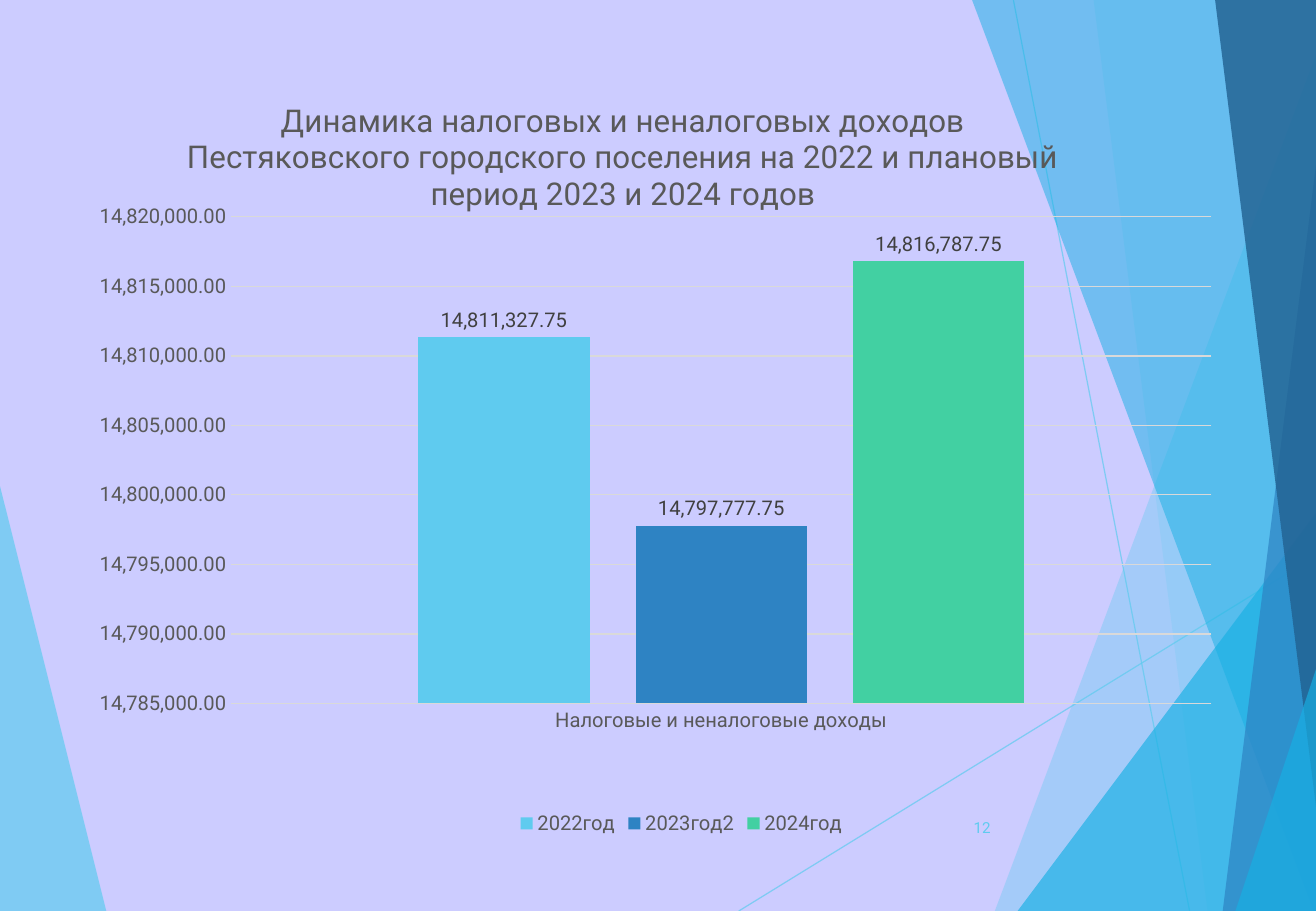
from lxml import etree
from pptx import Presentation
from pptx.chart.data import CategoryChartData
from pptx.dml.color import RGBColor
from pptx.enum import chart as charts, shapes, text
from pptx.oxml import ns
from pptx.util import Inches, Pt

LAVENDER = RGBColor(0xCC, 0xCC, 0xFF)
SKY = RGBColor(0x5F, 0xCB, 0xEF)
CYAN = RGBColor(0x17, 0xB0, 0xE4)
BLUE = RGBColor(0x2E, 0x83, 0xC3)
NAVY = RGBColor(0x22, 0x62, 0x92)
GREEN = RGBColor(0x42, 0xD0, 0xA2)
GREY = RGBColor(0x59, 0x59, 0x59)
DARK = RGBColor(0x40, 0x40, 0x40)
PALE = RGBColor(0xD9, 0xD9, 0xD9)
FONT = "Roboto"
NUMBER_FORMAT = "#,##0.00"


def set_opacity(shape, percent):
    color = shape._element.spPr.find(".//" + ns.qn("a:srgbClr"))
    etree.SubElement(color, ns.qn("a:alpha"), val=str(percent * 1000))


def place(element, index, **position):
    """Give a chart part a manual layout, in fractions of the chart."""
    for old in element.findall(ns.qn("c:layout")):
        element.remove(old)
    layout = etree.Element(ns.qn("c:layout"))
    manual = etree.SubElement(layout, ns.qn("c:manualLayout"))
    for tag, value in position.items():
        etree.SubElement(manual, ns.qn("c:" + tag), val=str(value))
    element.insert(index, layout)


prs = Presentation()
prs.slide_width, prs.slide_height = Inches(10.83), Inches(7.5)
slide = prs.slides.add_slide(prs.slide_layouts[6])
slide.background.fill.solid()
slide.background.fill.fore_color.rgb = LAVENDER

# Facets and thin rays of the backdrop
rays = [(6.08, 7.5, 10.84, 4.57), (8.34, 0, 9.79, 7.5)]
for ends in rays:
    ray = slide.shapes.add_connector(
        shapes.MSO_CONNECTOR.STRAIGHT, *[Inches(v) for v in ends])
    ray.line.color.rgb = SKY
    ray.line.width = Pt(0.75)
    set_opacity(ray, 70)
    etree.SubElement(ray._element.spPr, ns.qn("a:effectLst"))

facets = [
    (SKY, 70, [(-0.01, 4.39), (0.53, 7.51), (-0.01, 7.5)]),
    (SKY, 36, [(10.56, 0), (8.17, 7.5), (10.85, 7.51), (10.84, 0)]),
    (SKY, 20, [(8.54, -0.01), (9.96, 7.5), (10.84, 7.5), (10.84, -0.01)]),
    (CYAN, 66, [(7.86, 7.5), (10.83, 4.29), (10.84, 7.5)]),
    (CYAN, 50, [(8.31, -0.01), (10.51, 7.5), (10.84, 7.5), (10.84, -0.01)]),
    (BLUE, 70, [(10.63, -0.01), (9.83, 7.5), (10.84, 7.5), (10.84, -0.01)]),
    (NAVY, 82, [(9.59, -0.01), (10.7, 7.5), (10.85, 7.5), (10.84, -0.01)]),
    (CYAN, 66, [(9.56, 7.5), (10.85, 5.35), (10.86, 7.5)]),
]
for color, opacity, corners in facets:
    builder = slide.shapes.build_freeform(*corners[0], scale=Inches(1))
    builder.add_line_segments(corners[1:], close=True)
    facet = builder.convert_to_shape()
    facet.fill.solid()
    facet.fill.fore_color.rgb = color
    set_opacity(facet, opacity)
    facet.line.fill.background()
    facet.shadow.inherit = False

# Revenue chart
revenue = [
    ("2022год", 14811327.75, SKY),
    ("2023год2", 14797777.75, BLUE),
    ("2024год", 14816787.75, GREEN),
]
data = CategoryChartData(number_format=NUMBER_FORMAT)
data.categories = ["Налоговые и неналоговые доходы"]
for year, amount, _ in revenue:
    data.add_series(year, [amount])
chart = slide.shapes.add_chart(
    charts.XL_CHART_TYPE.COLUMN_CLUSTERED,
    Inches(0.82), Inches(0.58), Inches(9.16), Inches(6.38), data).chart
chart.font.size = Pt(10)
chart.font.name = FONT

chart.has_title = True
title = chart.chart_title
title.text_frame.text = (
    "Динамика налоговых и неналоговых доходов Пестяковского городского "
    "поселения на 2022 и плановый период 2023 и 2024 годов")
title.include_in_layout = False

chart.has_legend = True
legend = chart.legend
legend.position = charts.XL_LEGEND_POSITION.BOTTOM
legend.include_in_layout = False

columns = chart.plots[0]
columns.gap_width = 219
columns.overlap = -27
columns.vary_by_categories = False

amounts, categories = chart.value_axis, chart.category_axis
for name, value in {"minimum_scale": 14785000, "maximum_scale": 14820000,
                    "major_unit": 5000}.items():
    setattr(amounts, name, value)
amounts.tick_labels.number_format = NUMBER_FORMAT
amounts.tick_labels.number_format_is_linked = False
amounts.format.line.fill.background()
for axis in (amounts, categories):
    axis.major_tick_mark = axis.minor_tick_mark = charts.XL_TICK_MARK.NONE
for line in (amounts.major_gridlines.format.line, categories.format.line):
    line.color.rgb = PALE
    line.width = Pt(0.75)

chart_fonts = [
    (title.text_frame.paragraphs[0].runs[0].font, 18.6, GREY),
    (legend.font, 12, GREY),
    (amounts.tick_labels.font, 12, GREY),
    (categories.tick_labels.font, 12, GREY),
]
for series, (_, _, color) in zip(columns.series, revenue):
    series.format.fill.solid()
    series.format.fill.fore_color.rgb = color
    series.invert_if_negative = False
    labels = series.data_labels
    labels.show_value = True
    labels.position = charts.XL_LABEL_POSITION.OUTSIDE_END
    labels.number_format = NUMBER_FORMAT
    labels.number_format_is_linked = False
    chart_fonts.append((labels.font, 12, DARK))
for font, size, color in chart_fonts:
    font.name = FONT
    font.size = Pt(size)
    font.bold = False
    font.color.rgb = color

place(title._element, 1, xMode="edge", yMode="edge", x=0.07, y=0.03)
place(legend._element, 1, xMode="edge", yMode="edge", x=0.37, y=0.95)
place(chart._chartSpace.chart.plotArea, 0, layoutTarget="inner",
      xMode="edge", yMode="edge", x=0.115, y=0.189, w=0.884, h=0.628)

# Page number
page_box = slide.shapes.add_textbox(
    Inches(7.64), Inches(6.61), Inches(0.61), Inches(0.4)).text_frame
page_box.word_wrap = True
page_box.vertical_anchor = text.MSO_ANCHOR.MIDDLE
page = page_box.paragraphs[0]
page.text = "12"
page.alignment = text.PP_ALIGN.RIGHT
page.font.name = FONT
page.font.size = Pt(9)
page.font.color.rgb = SKY

prs.save("out.pptx")
